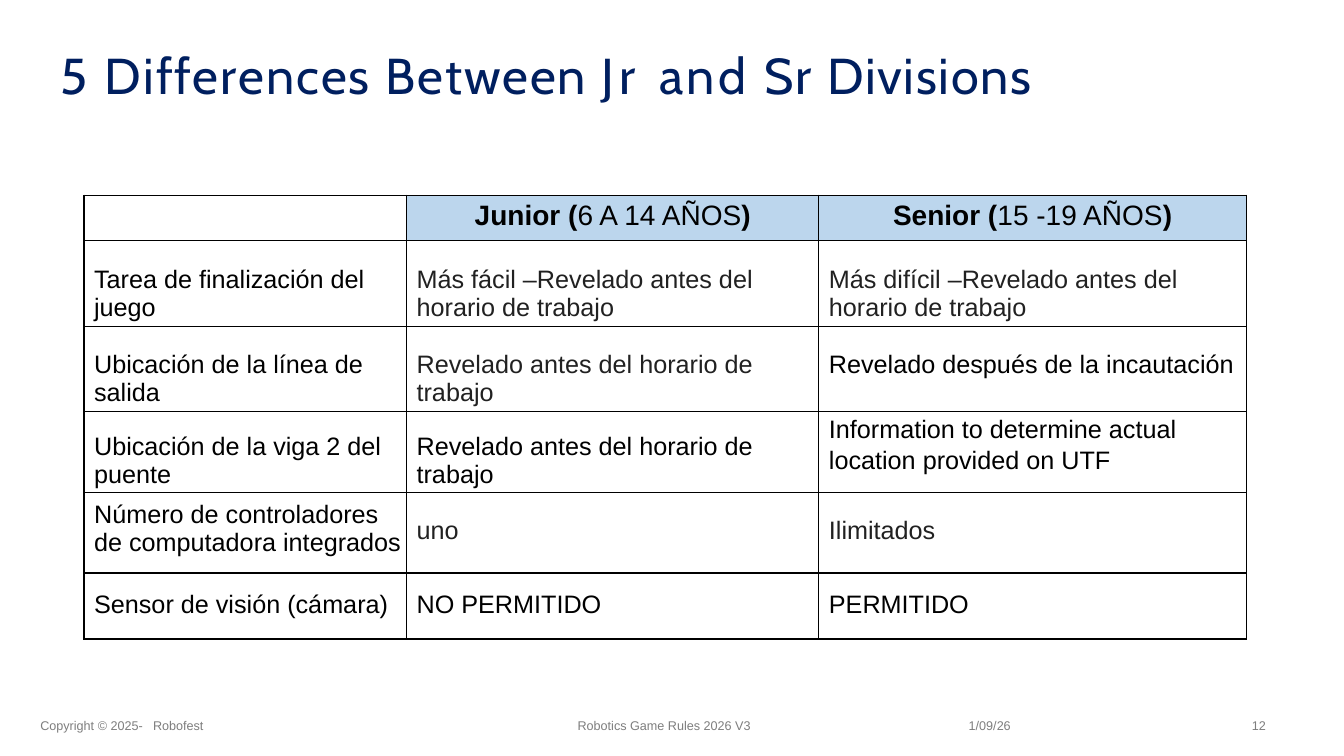
from dataclasses import dataclass

from lxml.etree import SubElement
from pptx import Presentation
from pptx.dml.color import RGBColor
from pptx.enum.text import MSO_ANCHOR, MSO_AUTO_SIZE, PP_ALIGN
from pptx.oxml.ns import qn
from pptx.util import Pt


@dataclass(frozen=True)
class Theme:
    """Colours, fonts and type sizes."""
    navy: str = "001F5F"
    black: str = "000000"
    ink: str = "212121"
    grey: str = "7E7E7E"
    sky: str = "BCD6ED"
    title_font: str = "Cabin"
    body_font: str = "Arial"
    title_size: int = 36
    header_size: int = 20
    cell_size: int = 18
    footer_size: int = 9


@dataclass(frozen=True)
class Entry:
    """One table cell: its wording, top margin, colour and line spacing."""
    text: str
    top: float
    color: str = Theme.black
    spacing: float = 1.0


THEME = Theme()
TITLE = [("5 ", 2.1), ("Differences ", 1.5), ("Between ", 1.4), ("Jr ", 4.2),
         ("and ", 2.5), ("Sr ", 1.4), ("Divisions", 1.2)]
HEADERS = [("Junior (", "6 A 14 AÑOS", ")"), ("Senior (", "15 -19 AÑOS", ")")]
COLUMN_WIDTHS = [230.4, 294.5, 305.3]
ROW_HEIGHTS = [32.2, 61.4, 60.7, 58.2, 57.5, 47.1]
ENTRIES = [
    [Entry("Tarea de finalización del juego", 18),
     Entry("Más fácil –Revelado antes del horario de trabajo", 18, THEME.ink),
     Entry("Más difícil –Revelado antes del horario de trabajo", 18, THEME.ink)],
    [Entry("Ubicación de la línea de salida", 17.5),
     Entry("Revelado antes del horario de trabajo", 17.5, THEME.ink),
     Entry("Revelado después de la incautación", 17.5)],
    [Entry("Ubicación de la viga 2 del puente", 15.2),
     Entry("Revelado antes del horario de trabajo", 15.2),
     Entry("Information to determine actual location provided on UTF", 2.1,
           spacing=1.07)],
    [Entry("Número de controladores de computadora integrados", 5.9),
     Entry("uno", 17.4, THEME.ink),
     Entry("Ilimitados", 17.4, THEME.ink)],
    [Entry("Sensor de visión (cámara)", 12.2),
     Entry("NO PERMITIDO", 12.2),
     Entry("PERMITIDO", 12.2)],
]
FOOTERS = [("Copyright © 2025-\tRobofest", 28.8, 120),
           ("Robotics Game Rules 2026 V3", 412.6, 127),
           ("1/09/26", 692, 33),
           ("12", 894.2, 15)]
COPYRIGHT_TAB = 80.5


def style_span(span, font, size, color, bold=False, tracking=0):
    """Format one run, with letter spacing in points."""
    span.font.name = font
    span.font.size = Pt(size)
    span.font.bold = bold
    span.font.color.rgb = RGBColor.from_string(color)
    if tracking:
        span._r.get_or_add_rPr().set("spc", str(round(tracking * 100)))


def clear_margins(frame, top=0):
    """Remove the margins of a text frame or cell, keeping a top one."""
    frame.margin_left = frame.margin_right = frame.margin_bottom = 0
    frame.margin_top = Pt(top)


def add_title(page, left, top, width, height):
    """Place the title and give each word its own letter spacing."""
    title = page.shapes.title
    title.left, title.top = Pt(left), Pt(top)
    title.width, title.height = Pt(width), Pt(height)
    frame = title.text_frame
    clear_margins(frame, 1)
    frame.word_wrap = True
    frame.auto_size = MSO_AUTO_SIZE.NONE
    frame.vertical_anchor = MSO_ANCHOR.TOP
    para = frame.paragraphs[0]
    para.alignment = PP_ALIGN.LEFT
    for word, tracking in TITLE:
        span = para.add_run()
        span.text = word
        style_span(span, THEME.title_font, THEME.title_size, THEME.navy,
                   tracking=tracking)


def style_cell(cell, color=None):
    """Fill a cell and draw thin black borders around it."""
    clear_margins(cell)
    properties = cell._tc.get_or_add_tcPr()
    for side in ("a:lnL", "a:lnR", "a:lnT", "a:lnB"):
        border = SubElement(properties, qn(side), w=str(Pt(1)))
        solid = SubElement(border, qn("a:solidFill"))
        SubElement(solid, qn("a:srgbClr"), val=THEME.black)
    if color:
        cell.fill.solid()
        cell.fill.fore_color.rgb = RGBColor.from_string(color)
    else:
        cell.fill.background()


def write_header(cell, parts):
    """Write a centred heading whose middle part is not bold."""
    style_cell(cell, THEME.sky)
    cell.margin_top = Pt(3.5)
    para = cell.text_frame.paragraphs[0]
    para.alignment = PP_ALIGN.CENTER
    for part, bold in zip(parts, (True, False, True)):
        span = para.add_run()
        span.text = part
        style_span(span, THEME.body_font, THEME.header_size, THEME.black, bold)


def write_entry(cell, entry):
    """Write one body cell."""
    style_cell(cell)
    cell.margin_left, cell.margin_top = Pt(7.2), Pt(entry.top)
    para = cell.text_frame.paragraphs[0]
    para.text = entry.text
    para.line_spacing = entry.spacing
    style_span(para.runs[0], THEME.body_font, THEME.cell_size, entry.color)


def add_division_table(page, left, top):
    """Build the table that compares the two divisions."""
    frame = page.shapes.add_table(
        len(ROW_HEIGHTS), len(COLUMN_WIDTHS), Pt(left), Pt(top),
        Pt(sum(COLUMN_WIDTHS)), Pt(sum(ROW_HEIGHTS)))
    table = frame.table
    table.first_row = table.horz_banding = False
    for column, width in zip(table.columns, COLUMN_WIDTHS):
        column.width = Pt(width)
    for row, height in zip(table.rows, ROW_HEIGHTS):
        row.height = Pt(height)
    style_cell(table.cell(0, 0))
    for column, parts in enumerate(HEADERS, 1):
        write_header(table.cell(0, column), parts)
    for row, entries in enumerate(ENTRIES, 1):
        for column, entry in enumerate(entries):
            write_entry(table.cell(row, column), entry)


def add_footer(page, top, height):
    """Place the small grey texts along the bottom edge."""
    for text, left, width in FOOTERS:
        box = page.shapes.add_textbox(Pt(left), Pt(top), Pt(width), Pt(height))
        frame = box.text_frame
        clear_margins(frame)
        frame.word_wrap = False
        para = frame.paragraphs[0]
        para.text = text
        if "\t" in text:
            tabs = SubElement(para._p.get_or_add_pPr(), qn("a:tabLst"))
            SubElement(tabs, qn("a:tab"), pos=str(Pt(COPYRIGHT_TAB)), algn="l")
        for span in para.runs:
            style_span(span, THEME.body_font, THEME.footer_size, THEME.grey)


def main():
    """Build and save the deck."""
    deck = Presentation()
    deck.slide_width, deck.slide_height = Pt(960), Pt(540)
    page = deck.slides.add_slide(deck.slide_layouts[5])
    add_title(page, 43.2, 30.2, 792, 45.4)
    add_division_table(page, 60, 139.4)
    add_footer(page, 513, 12.2)
    deck.save("out.pptx")


if __name__ == "__main__":
    main()
